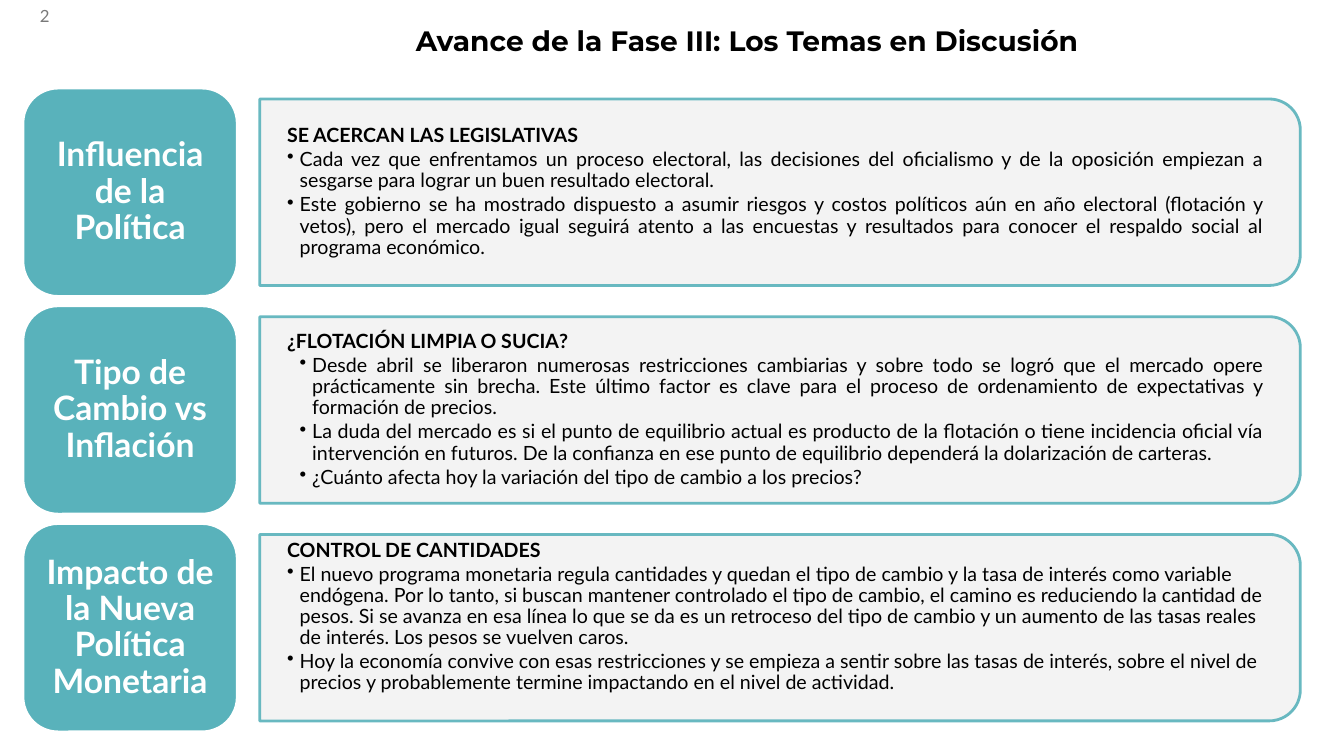
"""Build the slide on the three topics under discussion in Phase III."""
from dataclasses import dataclass

from lxml import etree
from pptx import Presentation
from pptx import util as u
from pptx.dml import color as dml
from pptx.enum import shapes, text
from pptx.oxml import ns

COLORS = {"teal": "59B2BB", "panel": "F2F2F2", "white": "FFFFFF",
          "black": "000000", "grey": "797979"}
W, H = u.Inches(13.33), u.Inches(7.5)
FIRST_MIDDLE, PITCH = 25.43, 28.8
TILE_LEFT, TILE_W, TILE_H = 1.73, 15.9, 27.47
PANEL_LEFT, PANEL_W, PANEL_H = 19.33, 77.42, 24.67
BODY_W, BODY_H = 76.74, 22.27
INDENT = 0.125


@dataclass
class Topic:
    name: str
    heading: str
    bullets: list[str]
    level: int = 1
    align: text.PP_ALIGN = text.PP_ALIGN.JUSTIFY
    bottom: float = 0.14


TOPICS = [
    Topic("Influencia de la Política", "SE ACERCAN LAS LEGISLATIVAS", [
        "Cada vez que enfrentamos un proceso electoral, las decisiones del oficialismo y de la "
        "oposición empiezan a sesgarse para lograr un buen resultado electoral.",
        "Este gobierno se ha mostrado dispuesto a asumir riesgos y costos políticos aún en año "
        "electoral (flotación y vetos), pero el mercado igual seguirá atento a las encuestas y "
        "resultados para conocer el respaldo social al programa económico."]),
    Topic("Tipo de Cambio vs Inflación", "¿FLOTACIÓN LIMPIA O SUCIA?", [
        "Desde abril se liberaron numerosas restricciones cambiarias y sobre todo se logró que el "
        "mercado opere prácticamente sin brecha. Este último factor es clave para el proceso de "
        "ordenamiento de expectativas y formación de precios.",
        "La duda del mercado es si el punto de equilibrio actual es producto de la flotación o "
        "tiene incidencia oficial vía intervención en futuros. De la confianza en ese punto de "
        "equilibrio dependerá la dolarización de carteras.",
        "¿Cuánto afecta hoy la variación del tipo de cambio a los precios?"], level=2),
    Topic("Impacto de la Nueva Política Monetaria", "CONTROL DE CANTIDADES", [
        "El nuevo programa monetaria regula cantidades y quedan el tipo de cambio y la tasa de "
        "interés como variable endógena. Por lo tanto, si buscan mantener controlado el tipo de "
        "cambio, el camino es reduciendo la cantidad de pesos. Si se avanza en esa línea lo que se "
        "da es un retroceso del tipo de cambio y un aumento de las tasas reales de interés. Los "
        "pesos se vuelven caros.",
        "Hoy la economía convive con esas restricciones y se empieza a sentir sobre las tasas de "
        "interés, sobre el nivel de precios y probablemente termine impactando en el nivel de "
        "actividad."], align=text.PP_ALIGN.LEFT, bottom=0.35),
]


def rgb(name: str) -> dml.RGBColor:
    return dml.RGBColor.from_string(COLORS[name])


def across(share: float) -> int:
    return round(W * share / 100)


def down(share: float) -> int:
    return round(H * share / 100)


def add_run(p, words: str, size: float, color: str, bold: bool = False,
            font: str = "Lato") -> None:
    r = p.add_run()
    r.text = words
    r.font.name, r.font.size, r.font.bold = font, u.Pt(size), bold
    r.font.color.rgb = rgb(color)


def prepare(tf) -> None:
    tf.word_wrap = True
    tf.auto_size = text.MSO_AUTO_SIZE.NONE
    tf.vertical_anchor = text.MSO_ANCHOR.MIDDLE


def add_box(s, kind, left: int, top: int, width: int, height: int,
            fill: str, line: str, weight: float):
    sp = s.shapes.add_shape(kind, left, top, width, height)
    sp.shadow.inherit = False
    sp.fill.solid()
    sp.fill.fore_color.rgb = rgb(fill)
    sp.line.color.rgb = rgb(line)
    sp.line.width = u.Pt(weight)
    return sp


def add_panel(s, middle: float) -> None:
    width, height = across(PANEL_W), down(PANEL_H)
    left = across(PANEL_LEFT) + (width - height) // 2
    sp = add_box(s, shapes.MSO_SHAPE.ROUND_2_SAME_RECTANGLE, left,
                 down(middle) - width // 2, height, width, "panel", "teal", 2)
    sp.rotation = 90
    for clr in sp.element.spPr.iter(ns.qn("a:srgbClr")):
        etree.SubElement(clr, ns.qn("a:alpha"), val="90000")


def add_body_paragraph(p, words: str, level: int, align: text.PP_ALIGN, bullet: bool) -> None:
    pPr = p._p.get_or_add_pPr()
    pPr.set("marL", str(u.Inches(INDENT * level)))
    pPr.set("indent", str(-u.Inches(INDENT)))
    if bullet:
        etree.SubElement(pPr, ns.qn("a:buChar"), char="•")
    p.level, p.alignment = level, align
    p.line_spacing, p.space_after = 0.9, u.Pt(2)
    add_run(p, words, 14, "black", bold=not bullet)


def add_body(s, topic: Topic, middle: float) -> None:
    tf = s.shapes.add_textbox(across(PANEL_LEFT), down(middle - BODY_H / 2),
                              across(BODY_W), down(BODY_H)).text_frame
    prepare(tf)
    tf.margin_left = tf.margin_right = u.Inches(0.27)
    tf.margin_top, tf.margin_bottom = u.Inches(0.14), u.Inches(topic.bottom)
    add_body_paragraph(tf.paragraphs[0], topic.heading, 1, text.PP_ALIGN.JUSTIFY, False)
    for words in topic.bullets:
        add_body_paragraph(tf.add_paragraph(), words, topic.level, topic.align, True)


def add_tile(s, name: str, middle: float) -> None:
    sp = add_box(s, shapes.MSO_SHAPE.ROUNDED_RECTANGLE, across(TILE_LEFT),
                 down(middle - TILE_H / 2), across(TILE_W), down(TILE_H), "teal", "white", 1.5)
    prepare(sp.text_frame)
    p = sp.text_frame.paragraphs[0]
    p.alignment, p.line_spacing = text.PP_ALIGN.CENTER, 0.9
    add_run(p, name, 24, "white", bold=True)


def add_title(s, words: str) -> None:
    sp = s.shapes.title
    sp.left, sp.top, sp.width, sp.height = across(25.06), down(1.6), across(61.07), down(8.13)
    prepare(sp.text_frame)
    p = sp.text_frame.paragraphs[0]
    p.alignment, p.line_spacing = text.PP_ALIGN.CENTER, 0.9
    add_run(p, words, 20, "black", bold=True, font="Montserrat")


def add_page_number(s, number: str) -> None:
    tf = s.shapes.add_textbox(0, down(-0.53), across(4.43), down(5.33)).text_frame
    prepare(tf)
    p = tf.paragraphs[0]
    p.alignment = text.PP_ALIGN.RIGHT
    add_run(p, number, 12, "grey")


def main() -> None:
    prs = Presentation()
    prs.slide_width, prs.slide_height = W, H
    s = prs.slides.add_slide(prs.slide_layouts[5])
    add_title(s, "Avance de la Fase III: Los Temas en Discusión")
    add_page_number(s, "2")
    for i, topic in enumerate(TOPICS):
        middle = FIRST_MIDDLE + i * PITCH
        add_panel(s, middle)
        add_body(s, topic, middle)
        add_tile(s, topic.name, middle)
    prs.save("out.pptx")


if __name__ == "__main__":
    main()
